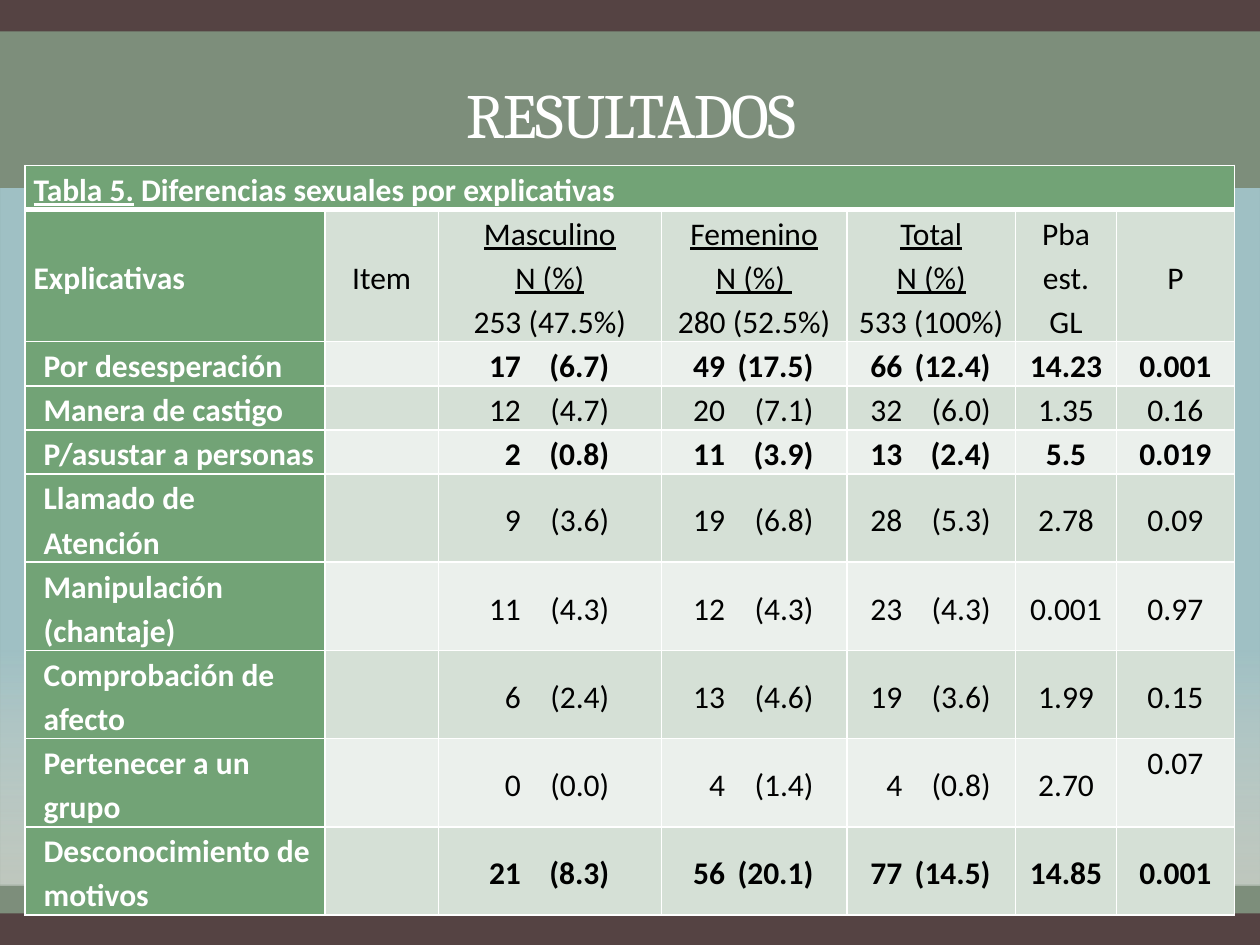
"""Build the results slide with table 5, sex differences by explanation."""
import pptx
import pptx.util
import pptx.dml.color
import pptx.enum.shapes
import pptx.enum.text
import pptx.oxml
import pptx.oxml.ns

Pt = pptx.util.Pt
RGB = pptx.dml.color.RGBColor
Align = pptx.enum.text.PP_ALIGN
Anchor = pptx.enum.text.MSO_ANCHOR
qn = pptx.oxml.ns.qn
NS = pptx.oxml.ns.nsdecls("a")

WHITE = RGB(0xFF, 0xFF, 0xFF)
BLACK = RGB(0, 0, 0)
BROWN = RGB(0x55, 0x43, 0x43)
OLIVE = RGB(0x82, 0x97, 0x82)
SKY = RGB(0xA8, 0xCD, 0xD7)
GREEN = RGB(0x72, 0xA3, 0x76)
TINTS = (RGB(0xD5, 0xE0, 0xD6), RGB(0xEB, 0xF0, 0xEC))

TITLE = "RESULTADOS"
LABEL, TOPIC = "Tabla 5.", " Diferencias sexuales por explicativas"
HEADS = ("Explicativas", "Item", "Masculino\nN (%)\n253 (47.5%)",
         "Femenino\nN (%) \n280 (52.5%)", "Total\nN (%)\n533 (100%)",
         "Pba est. GL", "P")
ROWS = (
    ("Por desesperación", "17 (6.7)", "49 (17.5)", "66 (12.4)", "14.23", "0.001"),
    ("Manera de castigo", "12 (4.7)", "20 (7.1)", "32 (6.0)", "1.35", "0.16"),
    ("P/asustar a personas", "2 (0.8)", "11 (3.9)", "13 (2.4)", "5.5", "0.019"),
    ("Llamado de\vAtención", "9 (3.6)", "19 (6.8)", "28 (5.3)", "2.78", "0.09"),
    ("Manipulación (chantaje)", "11 (4.3)", "12 (4.3)", "23 (4.3)", "0.001", "0.97"),
    ("Comprobación de afecto", "6 (2.4)", "13 (4.6)", "19 (3.6)", "1.99", "0.15"),
    ("Pertenecer a un grupo", "0 (0.0)", "4 (1.4)", "4 (0.8)", "2.70", "0.07"),
    ("Desconocimiento de motivos", "21 (8.3)", "56 (20.1)", "77 (14.5)",
     "14.85", "0.001"),
)
STRONG = {"Por desesperación", "P/asustar a personas", "Desconocimiento de motivos"}
WIDTHS = (171.5, 64.8, 127.4, 106, 96.5, 57.6, 67.4)
LINE = 25.2
LINES = (1, 3, 1, 1, 1, 2, 2, 2, 2, 2)
INSET = 5
INDENT = 5.75
STOPS = (-16.5, 34)


def fade(shape, *parts):
    colors = shape._element.spPr.iter(qn("a:srgbClr"))
    for color, part in zip(list(colors), parts):
        color.append(pptx.oxml.parse_xml(f'<a:alpha {NS} val="{part * 1000}"/>'))


def band(slide, top, high):
    kind = pptx.enum.shapes.MSO_SHAPE.RECTANGLE
    shape = slide.shapes.add_shape(kind, 0, Pt(top), Pt(720), Pt(high))
    shape.shadow.inherit = False
    shape.line.fill.background()
    shape.fill.solid()
    return shape


def backdrop(slide):
    band(slide, 0, 540).fill.fore_color.rgb = BROWN
    field = band(slide, 18, 504)
    field.fill.fore_color.rgb = OLIVE
    fade(field, 90)
    sky = band(slide, 108, 398)
    sky.fill.gradient()
    sky.fill.gradient_angle = 270
    for stop, (place, color) in zip(sky.fill.gradient_stops,
                                    ((0.66, SKY), (1, WHITE))):
        stop.position = place
        stop.color.rgb = color
    fade(sky, 79, 50)


def heading(slide):
    frame = slide.shapes.add_textbox(Pt(36.5), 0, Pt(648), Pt(90)).text_frame
    frame.word_wrap = True
    frame.vertical_anchor = Anchor.BOTTOM
    frame.text = TITLE
    para = frame.paragraphs[0]
    para.alignment = Align.CENTER
    font = para.runs[0].font
    font.name, font.size, font.color.rgb = "Cambria", Pt(36), WHITE
    para.runs[0]._r.get_or_add_rPr().set("spc", "-100")


def border(cell, row):
    props = cell._tc.get_or_add_tcPr()
    thick = {"T": 3 if row == 1 else 1, "B": 3 if row == 0 else 1}
    for spot, side in enumerate("LRTB"):
        wide = Pt(thick.get(side, 1))
        props.insert(spot, pptx.oxml.parse_xml(
            f'<a:ln{side} {NS} w="{wide}"><a:solidFill>'
            f'<a:srgbClr val="{WHITE}"/></a:solidFill></a:ln{side}>'))


def tabs(para, middle):
    marks = "".join(f'<a:tab pos="{Pt(middle + stop)}" algn="r"/>' for stop in STOPS)
    para._p.get_or_add_pPr().append(
        pptx.oxml.parse_xml(f"<a:tabLst {NS}>{marks}</a:tabLst>"))


def style(cell, row, col, bold):
    side = row == 0 or col == 0
    cell.fill.solid()
    cell.fill.fore_color.rgb = GREEN if side else TINTS[(row + 1) % 2]
    cell.vertical_anchor = Anchor.MIDDLE
    cell.margin_left = cell.margin_right = Pt(INSET)
    cell.margin_top = cell.margin_bottom = 0
    border(cell, row)
    for para in cell.text_frame.paragraphs:
        para.line_spacing = 1.15
        paired = "\t" in para.text
        para.alignment = Align.LEFT if side or paired else Align.CENTER
        if paired:
            tabs(para, WIDTHS[col] / 2 - INSET)
        if col == 0 and row > 1:
            para._p.get_or_add_pPr().set("marL", str(Pt(INDENT)))
        for run in para.runs:
            font = run.font
            font.name, font.size, font.bold = "Calibri", Pt(18), side or bold
            font.color.rgb = WHITE if side else BLACK


def grid(slide):
    tall = [LINE * count for count in LINES]
    table = slide.shapes.add_table(
        len(tall), len(WIDTHS), Pt(14.2), Pt(94.5),
        Pt(sum(WIDTHS)), Pt(sum(tall))).table
    table.first_row = table.horz_banding = False
    for column, wide in zip(table.columns, WIDTHS):
        column.width = Pt(wide)
    for line, high in zip(table.rows, tall):
        line.height = Pt(high)
    table.cell(0, 0).merge(table.cell(0, len(WIDTHS) - 1))
    para = table.cell(0, 0).text_frame.paragraphs[0]
    for text in (LABEL, TOPIC):
        para.add_run().text = text
    para.runs[0].font.underline = True
    body = [(name, "", *["\t" + pair.replace(" ", "\t") for pair in rest[:3]],
             *rest[3:]) for name, *rest in ROWS]
    for row, texts in enumerate([HEADS] + body, 1):
        for col, text in enumerate(texts):
            table.cell(row, col).text_frame.text = text
    for row in range(len(tall)):
        bold = row > 1 and ROWS[row - 2][0] in STRONG
        for col in range(len(WIDTHS)):
            style(table.cell(row, col), row, col, bold)
    for col in (2, 3, 4):
        for para in table.cell(1, col).text_frame.paragraphs[:2]:
            para.runs[0].font.underline = True
    table.cell(8, 6).vertical_anchor = Anchor.TOP


def main():
    deck = pptx.Presentation()
    deck.slide_width, deck.slide_height = Pt(720), Pt(540)
    slide = deck.slides.add_slide(deck.slide_layouts[6])
    backdrop(slide)
    heading(slide)
    grid(slide)
    deck.save("out.pptx")


if __name__ == "__main__":
    main()
